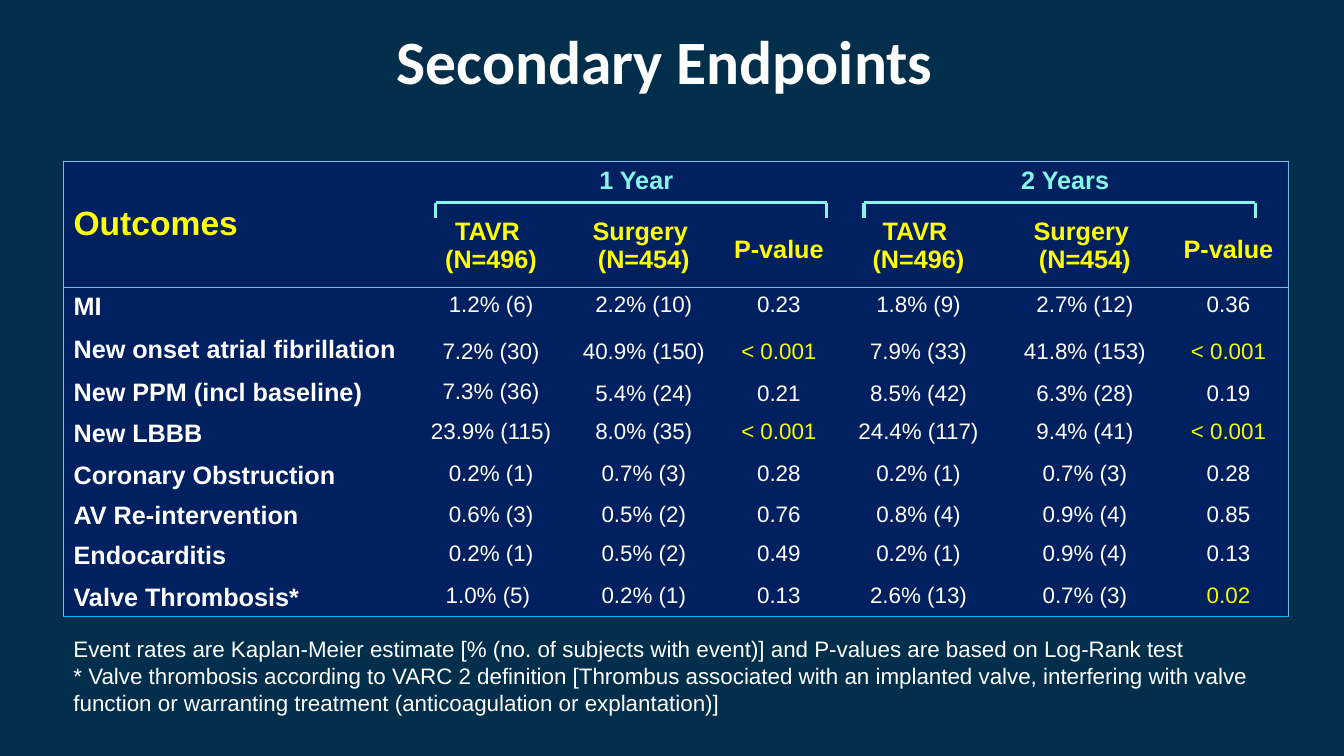
from dataclasses import dataclass

from lxml import etree
from pptx import Presentation
from pptx.dml.color import RGBColor
from pptx.enum.shapes import MSO_CONNECTOR
from pptx.enum.text import MSO_ANCHOR, MSO_AUTO_SIZE, PP_ALIGN
from pptx.oxml import parse_xml
from pptx.oxml.ns import nsdecls, qn
from pptx.util import Inches, Pt

LEFT, CENTER = PP_ALIGN.LEFT, PP_ALIGN.CENTER
TOP, MIDDLE = MSO_ANCHOR.TOP, MSO_ANCHOR.MIDDLE
NO_AUTOFIT = MSO_AUTO_SIZE.NONE
STRAIGHT = MSO_CONNECTOR.STRAIGHT
TITLE_ONLY = 5


@dataclass(frozen=True)
class Theme:
    background: str = "002E4B"
    panel: str = "002060"
    edge: str = "6FBDEE"
    bottom_edge: str = "00B0F0"
    period: str = "85F5E9"
    heading: str = "FFFF00"
    significant: str = "F1FE00"
    text: str = "FFFFFF"
    title_font: str = "Calibri"
    body_font: str = "Arial"
    title_size: int = 44
    corner_size: int = 24
    label_size: int = 18
    value_size: int = 16


PERIODS = [("1 Year", 1, 0.3), ("2 Years", 4, 0.16)]  # text, first column, left margin
HEADINGS = ["TAVR \n(N=496)", "Surgery \n(N=454)", "P-value"] * 2
OUTCOMES = [
    ("MI", "1.2% (6)", "2.2% (10)", "0.23", "1.8% (9)", "2.7% (12)", "0.36"),
    ("New onset atrial fibrillation", "7.2% (30)", "40.9% (150)", "< 0.001",
     "7.9% (33)", "41.8% (153)", "< 0.001"),
    ("New PPM (incl baseline)", "7.3% (36)", "5.4% (24)", "0.21",
     "8.5% (42)", "6.3% (28)", "0.19"),
    ("New LBBB", "23.9% (115)", "8.0% (35)", "< 0.001",
     "24.4% (117)", "9.4% (41)", "< 0.001"),
    ("Coronary Obstruction", "0.2% (1)", "0.7% (3)", "0.28", "0.2% (1)", "0.7% (3)", "0.28"),
    ("AV Re-intervention", "0.6% (3)", "0.5% (2)", "0.76", "0.8% (4)", "0.9% (4)", "0.85"),
    ("Endocarditis", "0.2% (1)", "0.5% (2)", "0.49", "0.2% (1)", "0.9% (4)", "0.13"),
    ("Valve Thrombosis*", "1.0% (5) ", "0.2% (1)", "0.13", "2.6% (13)", "0.7% (3)", "0.02"),
]
SIGNIFICANT = {"< 0.001", "0.02"}
MIDDLE_FROM = {1: 1, 2: 2}  # outcome row: first vertically centred column
COLUMNS = [3.5, 1.48, 1.55, 1.13, 1.64, 1.66, 1.19]
ROWS = [0.51, 0.74, 0.43, 0.43, 0.4, 0.42, 0.4, 0.39, 0.42, 0.36]
FOOTNOTES = (
    "Event rates are Kaplan-Meier estimate [% (no. of subjects with event)] "
    "and P-values are based on Log-Rank test\n"
    "* Valve thrombosis according to VARC 2 definition [Thrombus associated with an "
    "implanted valve, interfering with valve function or warranting treatment "
    "(anticoagulation or explantation)]"
)


class SlideBuilder:
    def __init__(self, prs, theme):
        self.theme = theme
        self.s = prs.slides.add_slide(prs.slide_layouts[TITLE_ONLY])
        fill = self.s.background.fill
        fill.solid()
        fill.fore_color.rgb = RGBColor.from_string(theme.background)

    def add_text(self, tf, text, size, color, align=LEFT, bold=False, font=None):
        fmt = {"name": font or self.theme.body_font, "size": Pt(size), "bold": bold}
        for i, line in enumerate(text.split("\n")):
            p = tf.paragraphs[0] if i == 0 else tf.add_paragraph()
            p.alignment = align
            r = p.add_run()
            r.text = line
            for name, value in fmt.items():
                setattr(r.font, name, value)
            r.font.color.rgb = RGBColor.from_string(color)

    def title(self, text, x, y, w, h):
        sp = self.s.shapes.title
        box = {"left": x, "top": y, "width": w, "height": h}
        for name, value in box.items():
            setattr(sp, name, Inches(value))
        tf = sp.text_frame
        frame = {"vertical_anchor": MIDDLE, "auto_size": NO_AUTOFIT, "word_wrap": True,
                 "margin_left": Inches(0.05), "margin_right": Inches(0.05)}
        for name, value in frame.items():
            setattr(tf, name, value)
        t = self.theme
        self.add_text(tf, text, t.title_size, t.text, CENTER, True, t.title_font)

    def text_box(self, text, x, y, w, h):
        tf = self.s.shapes.add_textbox(*map(Inches, (x, y, w, h))).text_frame
        tf.word_wrap = True
        self.add_text(tf, text, self.theme.value_size, self.theme.text)

    def bracket(self, x1, x2, y, drop):
        group = self.s.shapes.add_group_shape()
        for ends in ((x1, y, x2, y), (x1, y, x1, y + drop), (x2, y, x2, y + drop)):
            c = group.shapes.add_connector(STRAIGHT, *map(Inches, ends))
            c.line.color.rgb = RGBColor.from_string(self.theme.period)
            c.line.width = Pt(2.25)
            etree.SubElement(c._element.spPr, qn("a:effectLst"))

    def borders(self, cell, colors):
        tcPr = cell._tc.get_or_add_tcPr()
        for side in "LRTB":
            color = colors.get(side)
            paint = (f'<a:solidFill><a:srgbClr val="{color}"/></a:solidFill>'
                     if color else "<a:noFill/>")
            tcPr.append(parse_xml(
                f'<a:ln{side} {nsdecls("a")} w="12700">{paint}</a:ln{side}>'))

    def table(self, x, y, columns, rows):
        frame = self.s.shapes.add_table(len(rows), len(columns), Inches(x), Inches(y),
                                        Inches(sum(columns)), Inches(sum(rows)))
        tbl = frame.table
        tbl.first_row = tbl.horz_banding = False
        for column, width in zip(tbl.columns, columns):
            column.width = Inches(width)
        for row, height in zip(tbl.rows, rows):
            row.height = Inches(height)
        # Outer frame and the rule below the two heading rows
        edge, last_row, last_col = self.theme.edge, len(rows) - 1, len(columns) - 1
        for i in range(len(rows)):
            for j in range(len(columns)):
                cell = tbl.cell(i, j)
                colors = {}
                if j == 0:
                    colors["L"] = edge
                if j == last_col or (i, j) == (0, PERIODS[-1][1]):
                    colors["R"] = edge
                if i in (0, 2):
                    colors["T"] = edge
                if i == 1 or (i, j) == (0, 0):
                    colors["B"] = edge
                if i == last_row:
                    colors["B"] = self.theme.bottom_edge
                self.borders(cell, colors)
                cell.fill.solid()
                cell.fill.fore_color.rgb = RGBColor.from_string(self.theme.panel)
        return tbl

    def cell(self, cell, text, size, color, align=CENTER, bold=True, anchor=TOP):
        cell.vertical_anchor = anchor
        self.add_text(cell.text_frame, text, size, color, align, bold)


def main():
    prs = Presentation()
    prs.slide_width, prs.slide_height = Inches(13.33), Inches(7.5)
    t = Theme()
    b = SlideBuilder(prs, t)
    b.title("Secondary Endpoints ", 0, 0.18, 13.33, 0.83)

    # Table headings
    tbl = b.table(0.63, 1.6, COLUMNS, ROWS)
    tbl.cell(0, 0).merge(tbl.cell(1, 0))
    b.cell(tbl.cell(0, 0), "Outcomes", t.corner_size, t.heading, LEFT, anchor=MIDDLE)
    for text, first, margin in PERIODS:
        cell = tbl.cell(0, first)
        cell.merge(tbl.cell(0, first + 2))
        cell.margin_left = Inches(margin)
        b.cell(cell, text, t.label_size, t.period)
    for j, text in enumerate(HEADINGS, 1):
        anchor = MIDDLE if text == "P-value" else TOP
        b.cell(tbl.cell(1, j), text, t.label_size, t.heading, anchor=anchor)

    # Outcome rows
    for i, (label, *values) in enumerate(OUTCOMES):
        b.cell(tbl.cell(i + 2, 0), label, t.label_size, t.text, LEFT)
        for j, text in enumerate(values, 1):
            color = t.significant if text in SIGNIFICANT else t.text
            anchor = MIDDLE if j >= MIDDLE_FROM.get(i, len(COLUMNS)) else TOP
            b.cell(tbl.cell(i + 2, j), text, t.value_size, color, bold=False, anchor=anchor)

    # Period brackets and footnotes
    for x in (4.32, 8.57):
        b.bracket(x, x + 3.88, 2.01, 0.15)
    b.text_box(FOOTNOTES, 0.63, 6.25, 12.19, 1.18)

    prs.save("out.pptx")


if __name__ == "__main__":
    main()
